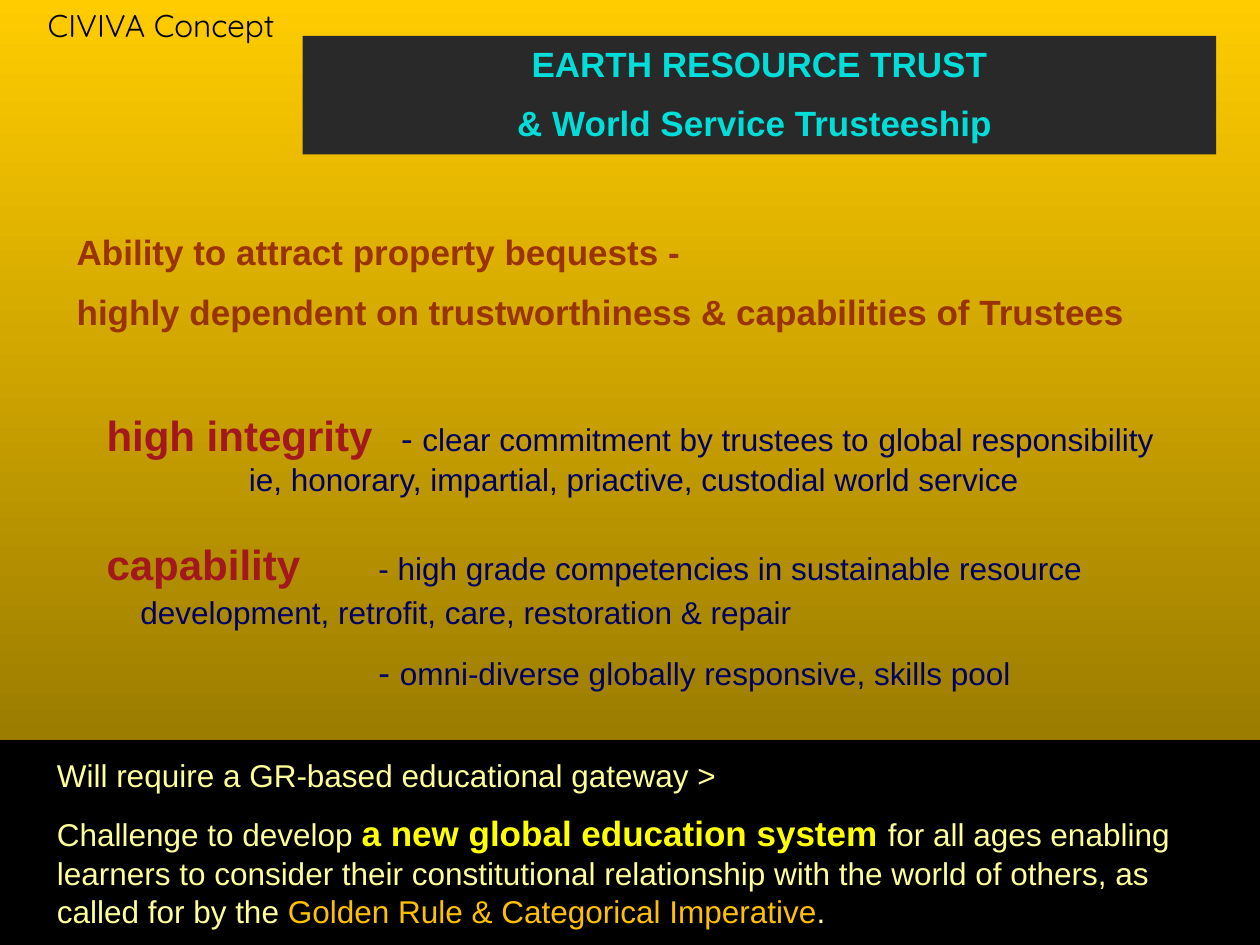
from lxml import etree
from pptx import Presentation
from pptx import util as u
from pptx.dml.color import RGBColor
from pptx.enum import shapes, text
from pptx.oxml import ns

Pt = u.Pt
NAVY, CRIMSON, CREAM = "000066", "A3171E", "FFFF99"


def colour(value):
    """Turn a hex string into a colour."""
    return RGBColor.from_string(value)


def add_text(para, words, size=18, ink=NAVY, bold=False, font="Arial"):
    """Add one formatted span to a paragraph."""
    span = para.add_run()
    span.text = words
    span.font.size, span.font.bold, span.font.name = Pt(size), bold, font
    span.font.color.rgb = colour(ink)


def set_tabs(para, *stops):
    """Give a paragraph left tab stops, in points from the text edge."""
    tabs = etree.SubElement(para._p.get_or_add_pPr(), ns.qn("a:tabLst"))
    for stop in stops:
        etree.SubElement(tabs, ns.qn("a:tab"), pos=str(Pt(stop)), algn="l")


def prepare_frame(shape, inset=7.2, top=3.6):
    """Set wrapping, anchor and insets, and return the text frame."""
    frame = shape.text_frame
    frame.word_wrap = True
    frame.auto_size = text.MSO_AUTO_SIZE.NONE
    frame.vertical_anchor = text.MSO_ANCHOR.TOP
    frame.margin_left, frame.margin_right = Pt(inset), Pt(7.2)
    frame.margin_top, frame.margin_bottom = Pt(top), Pt(3.6)
    return frame


def add_frame(page, box, **insets):
    """Add a text box and return its frame."""
    return prepare_frame(page.shapes.add_textbox(*map(Pt, box)), **insets)


def next_para(frame, gap=10.3):
    """Add a paragraph with space before it."""
    para = frame.add_paragraph()
    para.space_before = Pt(gap)
    return para


def add_block(page, box):
    """Add a plain rectangle without shadow."""
    block = page.shapes.add_shape(shapes.MSO_SHAPE.RECTANGLE, *map(Pt, box))
    block.shadow.inherit = False
    return block


def place_backdrop(page, box):
    """Lay a gold gradient that darkens downwards behind the title."""
    backdrop = add_block(page, box)
    backdrop.line.fill.background()
    backdrop.fill.gradient()
    backdrop.fill.gradient_angle = 270
    for stop, (place, ink) in zip(backdrop.fill.gradient_stops,
                                  [(0, "FFCC00"), (1, "806600")]):
        stop.position, stop.color.rgb = place, colour(ink)
    page.shapes.title.element.addprevious(backdrop.element)


def place_title(page, box):
    """Turn the title placeholder into a dark two-line band."""
    title = page.shapes.title
    title.left, title.top, title.width, title.height = map(Pt, box)
    title.fill.solid()
    title.fill.fore_color.rgb = colour("292929")
    frame = prepare_frame(title)
    first = frame.paragraphs[0]
    for para, words in ((first, "EARTH RESOURCE TRUST"),
                        (next_para(frame, 10), "& World Service Trusteeship ")):
        para.alignment = text.PP_ALIGN.CENTER
        add_text(para, words, 20, "00DED9", True)
    first.space_before = Pt(0)


def place_label(page, box):
    """Write the concept name in the corner."""
    para = add_frame(page, box).paragraphs[0]
    para.alignment = text.PP_ALIGN.CENTER
    add_text(para, "CIVIVA Concept", ink="000000", font="Quicksand")


def place_claim(page, box):
    """Write the two-line claim about bequests."""
    frame = add_frame(page, box)
    add_text(frame.paragraphs[0], "Ability to attract property bequests -", 20, "993300", True)
    add_text(next_para(frame), "highly dependent on trustworthiness & capabilities of Trustees",
             20, "993300", True)


def place_integrity(page, box):
    """Write the integrity point, with its explanation on tab stops."""
    para = add_frame(page, box, inset=35.7).paragraphs[0]
    set_tabs(para, 81.3, 168.3)
    add_text(para, "high integrity", 24, CRIMSON, True)
    add_text(para, "\t- ", 20)
    add_text(para, "clear commitment by trustees to")
    add_text(para, " ", 20)
    add_text(para, "global responsibility")
    para.add_line_break()
    add_text(para, "\tie, honorary, impartial, priactive, custodial world service")


def place_capability(page, box):
    """Write the capability points, with their details on tab stops."""
    frame = add_frame(page, box, inset=12.7, top=4.2)
    para = frame.paragraphs[0]
    set_tabs(para, 19.3, 155.3)
    add_text(para, "capability", 24, CRIMSON, True)
    add_text(para, "\t- high grade competencies in sustainable resource")
    para.add_line_break()
    add_text(para, "\tdevelopment, retrofit, care, restoration & repair")
    add_text(para, " ", 20, font="Quicksand")
    para = next_para(frame, 11)
    set_tabs(para, 19.3, 155.3)
    add_text(para, "\t\t- ", 20)
    add_text(para, "omni-diverse globally responsive, skills pool")


def place_footer(page, band, box):
    """Draw the black band and write the education challenge on it."""
    strip = add_block(page, band)
    strip.fill.solid()
    strip.fill.fore_color.rgb = strip.line.color.rgb = colour("000000")
    strip.line.width = Pt(0.75)
    frame = add_frame(page, box)
    add_text(frame.paragraphs[0], "Will require a GR-based educational gateway >", ink=CREAM)
    para = next_para(frame)
    add_text(para, "Challenge to develop ", ink=CREAM)
    add_text(para, "a new global education system ", 20, "FFFF00", True)
    add_text(para, "for all ages enabling learners to consider their constitutional relationship "
             "with the world of others, as called for by the ", ink=CREAM)
    add_text(para, "Golden Rule & Categorical Imperative", ink="FFC000")
    add_text(para, ".", ink=CREAM)


def main():
    """Build and save the slide."""
    deck = Presentation()
    deck.slide_width, deck.slide_height = Pt(720), Pt(540)
    page = deck.slides.add_slide(deck.slide_layouts[5])
    place_backdrop(page, (0, 0, 720, 540))
    place_title(page, (173, 20.5, 522, 67.7))
    place_integrity(page, (25.2, 230.4, 669, 57.6))
    place_claim(page, (36.7, 128.2, 646.6, 67))
    place_capability(page, (48.2, 303.8, 635, 95.8))
    place_label(page, (14.4, 0, 155.5, 28.8))
    place_footer(page, (0, 423.4, 720, 116.6), (25.4, 428.4, 663, 108.7))
    deck.save("out.pptx")


if __name__ == "__main__":
    main()
